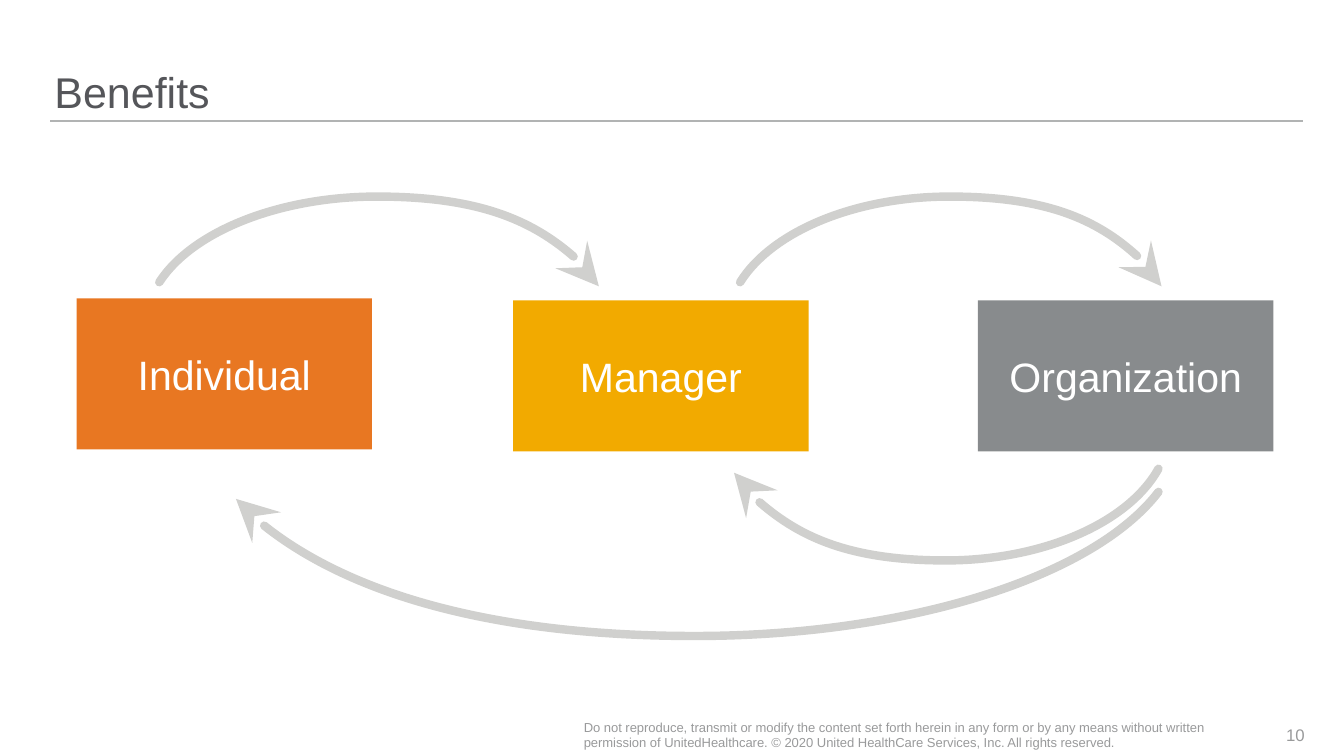
from dataclasses import dataclass

from lxml.etree import SubElement
from pptx import Presentation
from pptx.dml.color import RGBColor as RGB
from pptx.enum.shapes import MSO_CONNECTOR as CONN, MSO_SHAPE as SHAPE
from pptx.enum.text import MSO_ANCHOR as ANCHOR, PP_ALIGN as ALIGN
from pptx.oxml.ns import qn
from pptx.util import Inches, Pt


@dataclass(frozen=True)
class Theme:
    font: str = "Arial"
    title: str = "55565A"
    rule: str = "B1B3B3"
    arrow: str = "D0D0CE"
    footer: str = "999A9B"
    label: str = "FFFFFF"
    orange: str = "E87722"
    yellow: str = "F2AA00"
    gray: str = "888B8D"
    title_size: float = 30.7
    label_size: float = 29.3
    footer_size: float = 9.3
    number_size: float = 12


class Deck:
    """Holds the theme and the slide being drawn."""

    def __init__(self, prs, theme):
        self.theme = theme
        self.slide = prs.slides.add_slide(prs.slide_layouts[6])
        self.shapes = self.slide.shapes

    def fill_text(self, sp, text, size, color, align, anchor, margins=(0, 0)):
        tf = sp.text_frame
        tf.word_wrap = True
        tf.vertical_anchor = anchor
        tf.margin_left = tf.margin_right = Inches(margins[0])
        tf.margin_top = tf.margin_bottom = Inches(margins[1])
        p = tf.paragraphs[0]
        p.alignment = align
        r = p.add_run()
        r.text = text
        r.font.name = self.theme.font
        r.font.size = Pt(size)
        r.font.color.rgb = RGB.from_string(color)
        return p

    def text(self, at, text, size, color, align=ALIGN.LEFT, anchor=ANCHOR.MIDDLE):
        sp = self.shapes.add_textbox(*map(Inches, at))
        return self.fill_text(sp, text, size, color, align, anchor)

    def box(self, left, top, text, fill):
        sp = self.shapes.add_shape(
            SHAPE.RECTANGLE, Inches(left), Inches(top), Inches(2.93), Inches(1.5))
        sp.shadow.inherit = False
        sp.fill.solid()
        sp.fill.fore_color.rgb = RGB.from_string(fill)
        sp.line.fill.background()
        self.fill_text(sp, text, self.theme.label_size, self.theme.label,
                       ALIGN.CENTER, ANCHOR.MIDDLE, (0.07, 0.05))

    def rule(self, left, right, y):
        line = self.shapes.add_connector(
            CONN.STRAIGHT, Inches(left), Inches(y), Inches(right), Inches(y))
        line.line.color.rgb = RGB.from_string(self.theme.rule)
        line.line.width = Pt(1)
        SubElement(line._element.spPr, qn("a:effectLst"))

    def curved_arrow(self, start, *points):
        """Draw Bézier curves; each three points are two controls and an end."""
        builder = self.shapes.build_freeform(*map(Inches, start))
        builder.add_line_segments(
            [(Inches(x), Inches(y)) for x, y in points], close=False)
        sp = builder.convert_to_shape()
        sp.shadow.inherit = False
        sp.fill.background()
        sp.line.color.rgb = RGB.from_string(self.theme.arrow)
        sp.line.width = Pt(6)

        # Merge each three straight segments into one cubic curve
        segments = list(sp._element.iter(qn("a:lnTo")))
        for i in range(0, len(segments), 3):
            first, *others = segments[i:i + 3]
            first.tag = qn("a:cubicBezTo")
            for seg in others:
                first.append(seg[0])
                seg.getparent().remove(seg)

        # Round cap and large arrowhead
        ln = sp._element.spPr.find(qn("a:ln"))
        ln.set("cap", "rnd")
        SubElement(ln, qn("a:round"))
        SubElement(ln, qn("a:tailEnd"), type="stealth", w="lg", len="lg")


def main():
    prs = Presentation()
    prs.slide_width, prs.slide_height = Inches(13.33), Inches(7.5)
    theme = Theme()
    deck = Deck(prs, theme)

    # Title
    deck.rule(0.5, 12.92, 1.2)
    p = deck.text((0.54, 0, 12.38, 1.17), "Benefits", theme.title_size,
                  theme.title, anchor=ANCHOR.BOTTOM)
    p.line_spacing = 0.9

    # Beneficiaries
    deck.box(0.76, 2.96, "Individual", theme.orange)
    deck.box(5.09, 2.98, "Manager", theme.yellow)
    deck.box(9.7, 2.98, "Organization", theme.gray)

    # Arrows to the right, above the boxes
    deck.curved_arrow((1.58, 2.8), (1.91, 2.29), (2.78, 1.95), (3.74, 1.95),
                      (4.74, 1.95), (5.63, 2.31), (5.94, 2.84))
    deck.curved_arrow((7.34, 2.8), (7.66, 2.29), (8.49, 1.95), (9.42, 1.95),
                      (10.38, 1.95), (11.23, 2.31), (11.52, 2.84))

    # Arrows back to the left, below the boxes
    deck.curved_arrow((11.49, 4.65), (11.19, 5.19), (10.34, 5.56), (9.38, 5.56),
                      (8.44, 5.56), (7.6, 5.21), (7.28, 4.69))
    deck.curved_arrow((11.49, 4.88), (10.84, 5.73), (8.99, 6.31), (6.89, 6.31),
                      (4.85, 6.31), (3.04, 5.76), (2.34, 4.95))

    # Footer
    deck.text((5.79, 7.09, 6.48, 0.4),
              "Do not reproduce, transmit or modify the content set forth herein "
              "in any form or by any means without written permission of "
              "UnitedHealthcare. © 2020 United HealthCare Services, Inc. "
              "All rights reserved.", theme.footer_size, theme.footer)
    deck.text((12.27, 7.09, 0.67, 0.4), "10", theme.number_size, theme.footer,
              ALIGN.RIGHT)

    prs.save("out.pptx")


if __name__ == "__main__":
    main()
